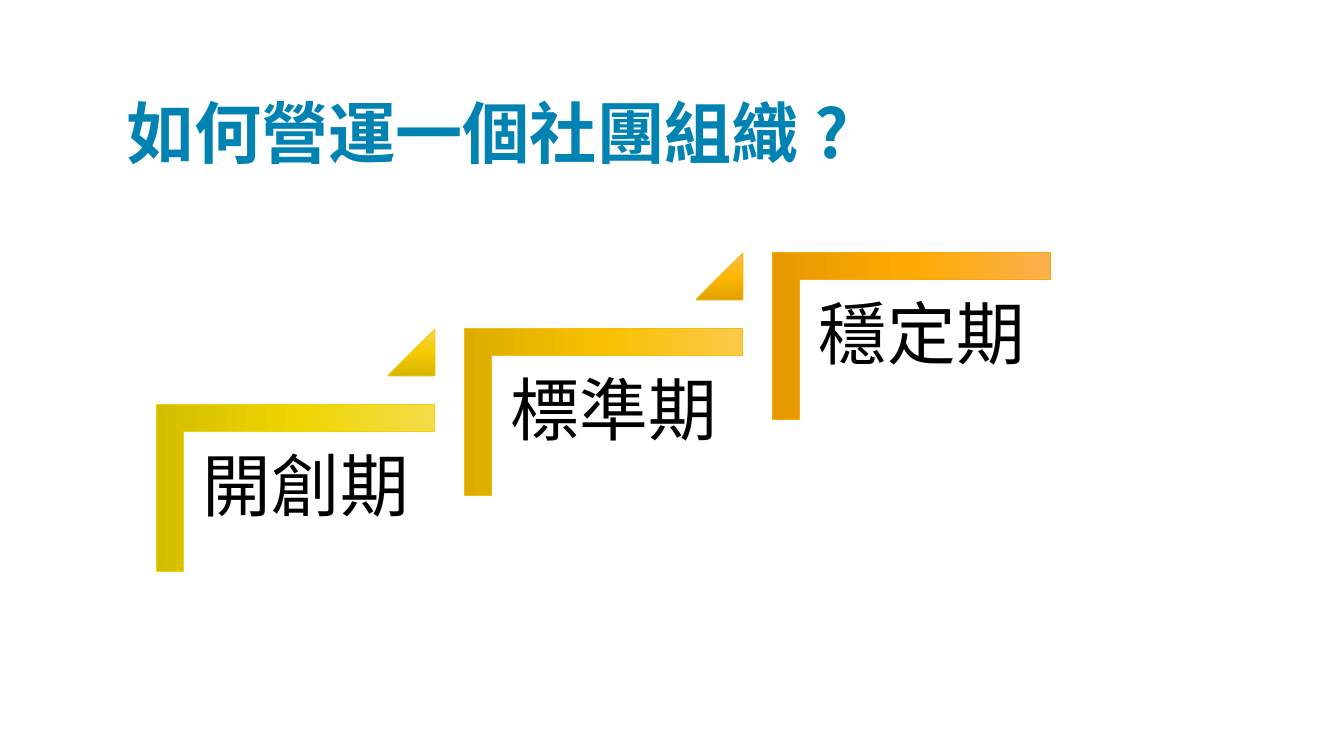
"""Build a slide showing the three rising stages of running a club."""
from copy import deepcopy
from dataclasses import dataclass

from pptx import Presentation
from pptx.dml.color import RGBColor
from pptx.enum.shapes import MSO_SHAPE
from pptx.enum.text import MSO_ANCHOR
from pptx.oxml.ns import qn
from pptx.shapes.autoshape import Shape
from pptx.slide import Slide
from pptx.util import Emu, Pt

PIXELS_PER_INCH = 100.8
FONT = "Noto Sans CJK SC"
STEP_RIGHT, STEP_UP = 308, 76
COLORS = {
    "title": "0083B3",
    "label": "000000",
    "yellow_light": "F4DC4B", "yellow": "EED500", "yellow_dark": "D3BD00",
    "yellow_line": "EED500",
    "lemon_light": "F8D34B", "lemon": "F3CB00", "lemon_dark": "D8B500",
    "lemon_line": "F1CA02",
    "gold_light": "FCC94B", "gold": "F8C100", "gold_dark": "DCAC00",
    "gold_line": "F3BF05",
    "amber_light": "FBBC4B", "amber": "FDB700", "amber_dark": "E1A200",
    "amber_line": "F5B308",
    "orange_light": "F9B14C", "orange": "FFAA03", "orange_dark": "E59800",
    "orange_line": "F5A70D",
}
TITLE_FORMAT = {"name": FONT, "size": Pt(48), "bold": True}
LABEL_FORMAT = {"name": FONT, "size": Pt(49), "bold": False}


@dataclass(frozen=True)
class Box:
    left: int
    top: int
    width: int
    height: int

    def moved(self, step: int) -> "Box":
        return Box(self.left + step * STEP_RIGHT, self.top - step * STEP_UP,
                   self.width, self.height)

    def emu(self) -> list[Emu]:
        return [px(value) for value in (self.left, self.top, self.width, self.height)]


@dataclass(frozen=True)
class Stage:
    label: str
    corner_tone: str
    triangle_tone: str = ""


TITLE_BOX = Box(117, 58, 958, 118)
CORNER_BOX = Box(212, 349, 167, 278)
LABEL_BOX = Box(183, 432, 252, 221)
TRIANGLE_BOX = Box(388, 329, 47, 47)
STAGES = [
    Stage("開創期", "yellow", "lemon"),
    Stage("標準期", "gold", "amber"),
    Stage("穩定期", "orange"),
]


def px(value: int) -> Emu:
    return Emu(round(value * 914400 / PIXELS_PER_INCH))


def color(name: str) -> RGBColor:
    return RGBColor.from_string(COLORS[name])


def add_text(slide: Slide, box: Box, text: str, color_name: str, font_format: dict,
             frame_format: dict, line_spacing: float) -> None:
    frame = slide.shapes.add_textbox(*box.emu()).text_frame
    for name, value in {"word_wrap": True, **frame_format}.items():
        setattr(frame, name, value)
    paragraph = frame.paragraphs[0]
    paragraph.line_spacing = line_spacing
    run = paragraph.add_run()
    run.text = text
    for name, value in font_format.items():
        setattr(run.font, name, value)
    run.font.color.rgb = color(color_name)
    latin = next(paragraph._p.iter(qn("a:latin")))
    east_asian = latin.makeelement(qn("a:ea"), {"typeface": FONT})
    latin.addnext(east_asian)


def add_gradient_shape(slide: Slide, kind: MSO_SHAPE, box: Box, tone: str,
                       adjustments: list[float]) -> Shape:
    shape = slide.shapes.add_shape(kind, *box.emu())
    shape.shadow.inherit = False
    for index, value in enumerate(adjustments):
        shape.adjustments[index] = value
    shape.fill.gradient()
    shape.fill.gradient_angle = 270
    stop_list = next(shape._element.iter(qn("a:gsLst")))
    stop_list.append(deepcopy(stop_list[-1]))
    stops = zip(shape.fill.gradient_stops, (0, 0.5, 1), ("_light", "", "_dark"))
    for stop, position, shade in stops:
        stop.position = position
        stop.color.rgb = color(tone + shade)
    shape.line.color.rgb = color(f"{tone}_line")
    shape.line.width = Pt(0.5)
    return shape


def add_stage(slide: Slide, step: int, stage: Stage) -> None:
    corner = add_gradient_shape(slide, MSO_SHAPE.CORNER, CORNER_BOX.moved(step),
                                stage.corner_tone, [0.16, 0.16])
    corner.rotation = 90
    sides = ("left", "top", "right", "bottom")
    margins = {f"margin_{side}": px(20) for side in sides}
    add_text(slide, LABEL_BOX.moved(step), stage.label, "label", LABEL_FORMAT,
             margins, 0.9)
    if stage.triangle_tone:
        add_gradient_shape(slide, MSO_SHAPE.ISOSCELES_TRIANGLE,
                           TRIANGLE_BOX.moved(step), stage.triangle_tone, [1])


def main() -> None:
    presentation = Presentation()
    presentation.slide_width, presentation.slide_height = px(1344), px(756)
    slide = presentation.slides.add_slide(presentation.slide_layouts[6])
    add_text(slide, TITLE_BOX, "如何營運一個社團組織 ?", "title", TITLE_FORMAT,
             {"vertical_anchor": MSO_ANCHOR.BOTTOM}, 0.8)
    for step, stage in enumerate(STAGES):
        add_stage(slide, step, stage)
    presentation.save("out.pptx")


if __name__ == "__main__":
    main()
